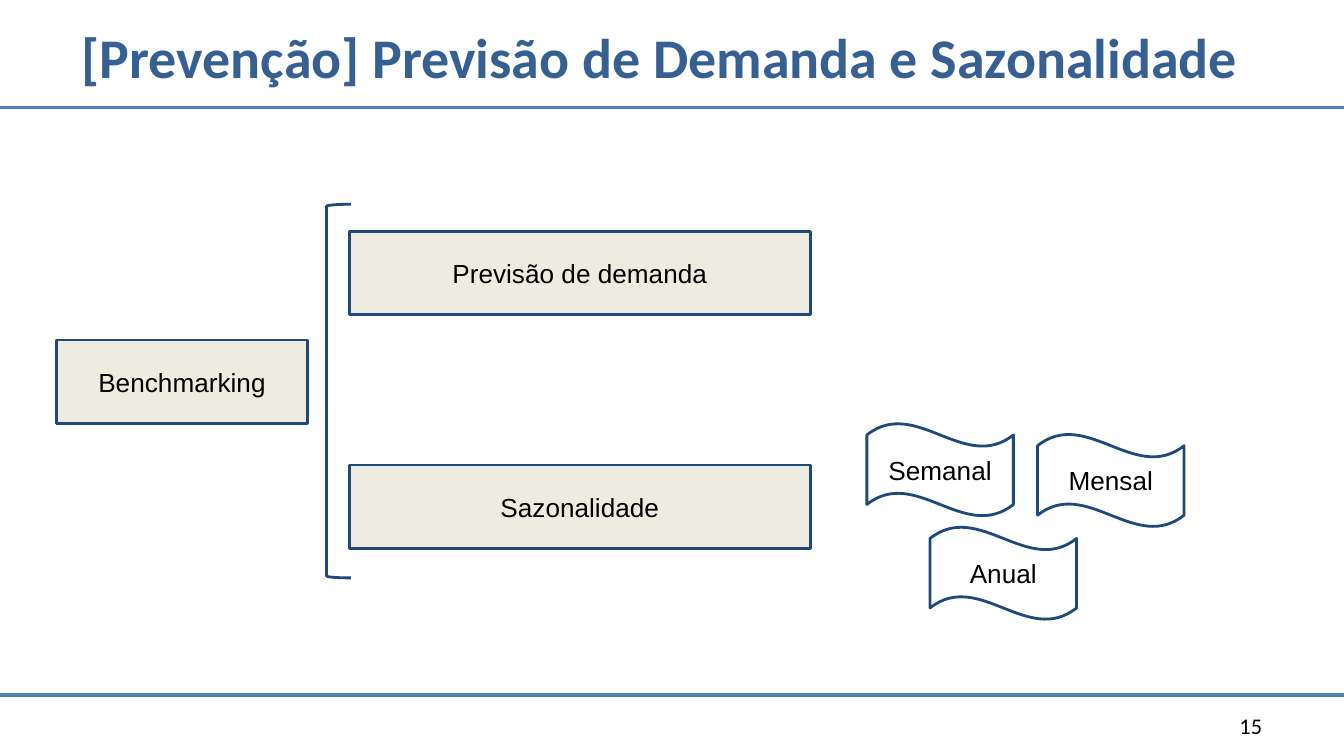
from lxml.etree import SubElement
from pptx import Presentation
from pptx.dml.color import RGBColor
from pptx.enum.shapes import MSO_CONNECTOR, MSO_SHAPE
from pptx.enum.text import MSO_ANCHOR, PP_ALIGN
from pptx.oxml.ns import qn
from pptx.util import Inches, Pt

BLACK = RGBColor(0x00, 0x00, 0x00)
WHITE = RGBColor(0xFF, 0xFF, 0xFF)
CREAM = RGBColor(0xEE, 0xEC, 0xE1)
NAVY = RGBColor(0x1F, 0x49, 0x7D)
RULE_BLUE = RGBColor(0x4F, 0x81, 0xBD)
TITLE_BLUE = RGBColor(0x36, 0x60, 0x92)

SLIDE_WIDTH = 10
SLIDE_HEIGHT = SLIDE_WIDTH * 9 / 16
BOX_HEIGHT = 0.62
BRANCH_LEFT, BRANCH_WIDTH = 2.6, 3.43
WAVE_WIDTH, WAVE_HEIGHT = 1.09, 0.69


def write(shape, text, size, font, color, align, bold=False):
    tf = shape.text_frame
    tf.word_wrap = True
    tf.vertical_anchor = MSO_ANCHOR.MIDDLE
    p = tf.paragraphs[0]
    p.text = text
    p.alignment = align
    p.font.size = Pt(size)
    p.font.name = font
    p.font.bold = bold
    p.font.color.rgb = color


def add_text(s, text, left, top, width, height, size, color, align, bold=False):
    tb = s.shapes.add_textbox(Inches(left), Inches(top), Inches(width), Inches(height))
    write(tb, text, size, "Calibri", color, align, bold)


def add_rule(s, top):
    """Draw a line across the whole slide."""
    line = s.shapes.add_connector(
        MSO_CONNECTOR.STRAIGHT, 0, Inches(top), Inches(SLIDE_WIDTH), Inches(top))
    line.line.color.rgb = RULE_BLUE
    line.line.width = Pt(2)
    SubElement(line._element.spPr, qn("a:effectLst"))


def add_outlined(s, kind, left, top, width, height):
    sp = s.shapes.add_shape(
        kind, Inches(left), Inches(top), Inches(width), Inches(height))
    sp.shadow.inherit = False
    sp.line.color.rgb = NAVY
    sp.line.width = Pt(1.5)
    return sp


def add_labelled(s, kind, text, left, top, width, height, fill):
    sp = add_outlined(s, kind, left, top, width, height)
    sp.fill.solid()
    sp.fill.fore_color.rgb = fill
    tf = sp.text_frame
    tf.margin_left = tf.margin_right = Inches(0.1)
    tf.margin_top = tf.margin_bottom = Inches(0.1)
    write(sp, text, 14, "Arial", BLACK, PP_ALIGN.CENTER)


def add_box(s, text, left, top, width):
    add_labelled(s, MSO_SHAPE.RECTANGLE, text, left, top, width, BOX_HEIGHT, CREAM)


def add_wave(s, text, left, top):
    add_labelled(s, MSO_SHAPE.WAVE, text, left, top, WAVE_WIDTH, WAVE_HEIGHT, WHITE)


def add_bracket(s, left, top, width, height):
    bracket = add_outlined(s, MSO_SHAPE.LEFT_BRACKET, left, top, width, height)
    bracket.adjustments[0] = 0.08
    bracket.fill.background()


def main():
    prs = Presentation()
    prs.slide_width, prs.slide_height = Inches(SLIDE_WIDTH), Inches(SLIDE_HEIGHT)
    s = prs.slides.add_slide(prs.slide_layouts[6])

    for top in (0.8, 5.17):
        add_rule(s, top)
    add_text(s, "[Prevenção] Previsão de Demanda e Sazonalidade",
             0.51, 0.15, 8.87, 0.53, 30, TITLE_BLUE, PP_ALIGN.LEFT, bold=True)
    add_text(s, "15", 7.13, 5.17, 2.36, 0.45, 12, BLACK, PP_ALIGN.RIGHT)

    for text, top in (("Previsão de demanda", 1.72), ("Sazonalidade", 3.46)):
        add_box(s, text, BRANCH_LEFT, top, BRANCH_WIDTH)
    add_box(s, "Benchmarking", 0.42, 2.53, 1.87)
    add_bracket(s, 2.43, 1.52, 0.18, 2.78)

    for text, left, top in (("Semanal", 6.45, 3.15),
                            ("Mensal", 7.72, 3.23),
                            ("Anual", 6.92, 3.92)):
        add_wave(s, text, left, top)

    prs.save("out.pptx")


if __name__ == "__main__":
    main()
